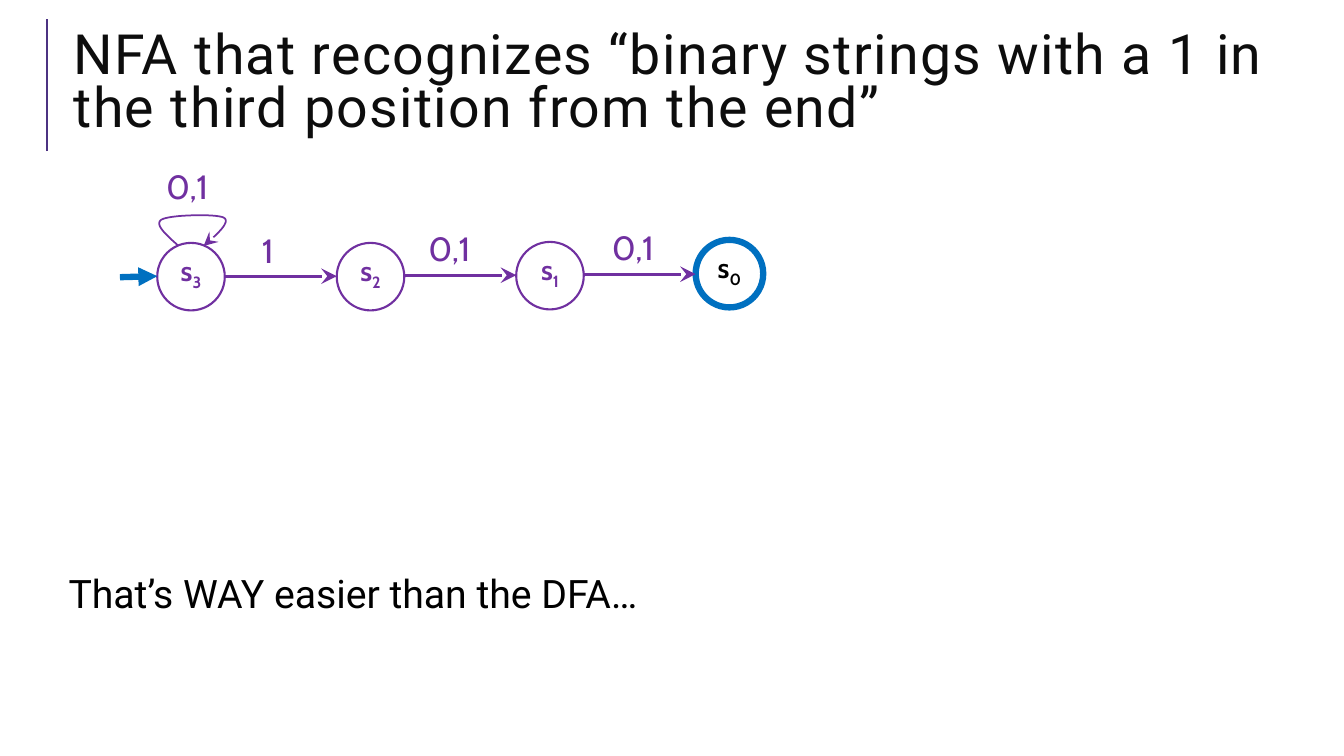
from pptx import Presentation
from pptx.dml.color import RGBColor
from pptx.enum.shapes import MSO_CONNECTOR, MSO_SHAPE
from pptx.enum.text import MSO_ANCHOR, MSO_AUTO_SIZE, PP_ALIGN
from pptx.oxml.ns import qn
from pptx.util import Inches, Pt
from lxml import etree

TITLE = "NFA that recognizes “binary strings with a 1 in the third position from the end”"
NOTE = "That’s WAY easier than the DFA…"
PURPLE, BLUE, BLACK = "7030A0", "0070C0", "000000"

# digit, top, text colour, line colour, line width
STATES = [
    ("3", 2.41, PURPLE, PURPLE, 1.5),
    ("2", 2.41, PURPLE, PURPLE, 1.5),
    ("1", 2.4, PURPLE, PURPLE, 1.5),
    ("0", 2.38, BLACK, BLUE, 4.5),
]
LEFT, STEP, SIZE = 1.56, 1.78, 0.67
ARROWS = [2.74, 2.73, 2.72]
# text, left, top, width
LABELS = [
    ("0,1", 1.55, 1.6, 0.68),
    ("1", 2.5, 2.23, 0.4),
    ("0,1", 4.15, 2.21, 0.68),
    ("0,1", 5.97, 2.2, 0.68),
]
# start point, then two control points and an end point for each curve
LOOP = [
    (1.77, 2.44), (1.65, 2.33), (1.53, 2.23), (1.6, 2.18),
    (1.68, 2.13), (2.15, 2.12), (2.22, 2.16),
    (2.29, 2.2), (2.16, 2.32), (2.02, 2.44),
]


def color(code):
    return RGBColor.from_string(code)


def write(para, text, size, font, code, bold=False):
    run = para.add_run()
    run.text = text
    run.font.size = Pt(size)
    run.font.name = font
    run.font.bold = bold
    run.font.color.rgb = color(code)
    return run


def stroke(shape, code, width, head=None, scale="med"):
    shape.line.color.rgb = color(code)
    shape.line.width = Pt(width)
    if head:
        ln = shape.line._get_or_add_ln()
        etree.SubElement(ln, qn("a:tailEnd"), type=head, w=scale, len=scale)


def link(x1, y1, x2, y2, code, width, head=None, scale="med"):
    line = slide.shapes.add_connector(
        MSO_CONNECTOR.STRAIGHT, Inches(x1), Inches(y1), Inches(x2), Inches(y2))
    stroke(line, code, width, head, scale)
    etree.SubElement(line._element.spPr, qn("a:effectLst"))


def textbox(left, top, width, height, wrap):
    box = slide.shapes.add_textbox(
        Inches(left), Inches(top), Inches(width), Inches(height))
    box.text_frame.word_wrap = wrap
    return box.text_frame


def bezier(p0, p1, p2, p3, count=16):
    """Return points along a cubic curve, without its start."""
    points = []
    for i in range(1, count + 1):
        t = i / count
        u = 1 - t
        points.append(tuple(
            u**3 * a + 3 * u * u * t * b + 3 * u * t * t * c + t**3 * d
            for a, b, c, d in zip(p0, p1, p2, p3)))
    return points


def draw_state(left, top, digit, ink, code, width):
    oval = slide.shapes.add_shape(
        MSO_SHAPE.OVAL, Inches(left), Inches(top), Inches(SIZE), Inches(SIZE))
    oval.shadow.inherit = False
    oval.fill.background()
    stroke(oval, code, width)
    frame = oval.text_frame
    frame.word_wrap = False
    frame.vertical_anchor = MSO_ANCHOR.MIDDLE
    frame.margin_top, frame.margin_bottom = 0, Inches(0.08)
    para = frame.paragraphs[0]
    para.alignment = PP_ALIGN.CENTER
    write(para, "s", 20, "Cabin", ink, True)
    sub = write(para, digit, 20, "Cabin", ink, True)
    sub.font._element.set("baseline", "-25000")


def draw_loop():
    # the builder rounds to whole units, so points are given in EMU
    knots = [(Inches(x), Inches(y)) for x, y in LOOP]
    points = []
    for i in range(0, len(knots) - 1, 3):
        points += bezier(*knots[i:i + 4])
    outline = slide.shapes.build_freeform(*knots[0])
    outline.add_line_segments(points, close=False)
    loop = outline.convert_to_shape()
    loop.shadow.inherit = False
    loop.fill.background()
    stroke(loop, PURPLE, 1.25, "stealth", "lg")


deck = Presentation()
deck.slide_width, deck.slide_height = Inches(13.33), Inches(7.5)
slide = deck.slides.add_slide(deck.slide_layouts[5])

link(0.47, 1.5, 0.47, 0.19, "4C3282", 1.5)

title = slide.shapes.title
title.left, title.top = Inches(0.63), Inches(0.29)
title.width, title.height = Inches(12.23), Inches(1.11)
title.text_frame.auto_size = MSO_AUTO_SIZE.NONE
title.text_frame.vertical_anchor = MSO_ANCHOR.MIDDLE
para = title.text_frame.paragraphs[0]
para.alignment = PP_ALIGN.LEFT
para.line_spacing = 0.8
head = write(para, TITLE, 39.6, "Roboto", "0D0D0D")
head.font._element.set("spc", "100")

frame = textbox(0.63, 5.65, 12.23, 0.6, True)
frame.margin_left = frame.margin_top = Inches(0.05)
para = frame.paragraphs[0]
para.line_spacing = 0.9
write(para, NOTE, 28, "Roboto", BLACK)

for i, (digit, top, ink, code, width) in enumerate(STATES):
    draw_state(LEFT + i * STEP, top, digit, ink, code, width)
for i, y in enumerate(ARROWS):
    start = LEFT + i * STEP
    link(start + SIZE, y, start + STEP, y, PURPLE, 2.25, "stealth", "lg")
link(1.19, 2.75, LEFT, 2.74, BLUE, 4.5, "triangle")
draw_loop()

for text, left, top, width in LABELS:
    frame = textbox(left, top, width, 0.5, False)
    write(frame.paragraphs[0], text, 24, "Cabin", PURPLE)

deck.save("out.pptx")
